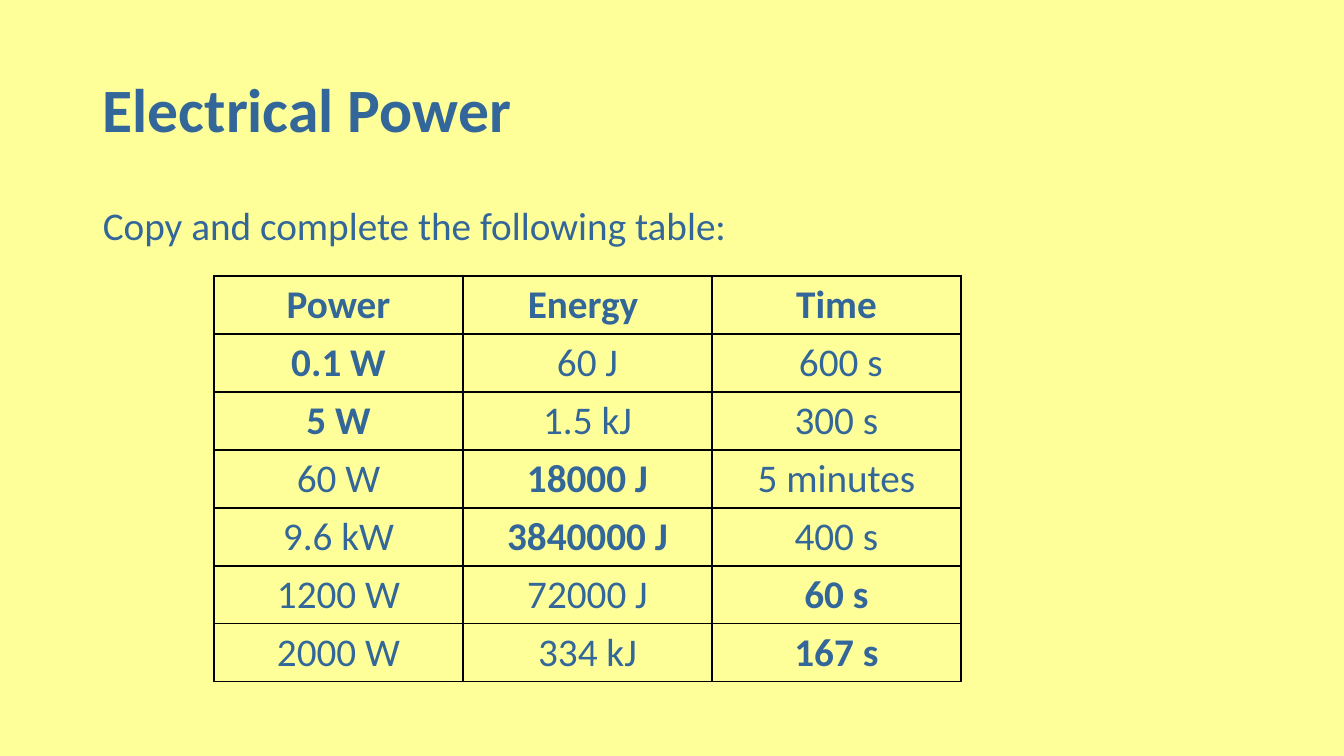
import dataclasses

import pptx
import pptx.dml.color
import pptx.enum.text
import pptx.oxml
import pptx.oxml.ns
import pptx.util

PX = 914400 / 100.8


@dataclasses.dataclass(frozen=True)
class Theme:
    font: str = "Calibri"
    back: str = "FFFF99"
    ink: str = "336699"
    rule: str = "000000"
    title: int = 44
    body: int = 28


THEME = Theme()
HEAD = ("Power", "Energy ", "Time")
# Each row: its three values, then the column that holds the answer.
ROWS = (
    (("0.1 W", "60 J", " 600 s"), 0),
    (("5 W", "1.5 kJ", "300 s"), 0),
    (("60 W", "18000 J", "5 minutes"), 1),
    (("9.6 kW", "3840000 J", "400 s"), 1),
    (("1200 W", "72000 J", "60 s"), 2),
    (("2000 W", "334 kJ", "167 s"), 2),
)


def px(num):
    return pptx.util.Emu(round(num * PX))


def color(code):
    return pptx.dml.color.RGBColor.from_string(code)


def style(para, size, bold=False):
    font = para.font
    font.name = THEME.font
    font.size = pptx.util.Pt(size)
    font.bold = bold
    font.color.rgb = color(THEME.ink)


def add_text(slide, text, area, size, bold=False, anchor="TOP"):
    box = slide.shapes.add_textbox(*map(px, area))
    frame = box.text_frame
    frame.word_wrap = True
    frame.vertical_anchor = pptx.enum.text.MSO_ANCHOR[anchor]
    para = frame.paragraphs[0]
    para.text = text
    para.line_spacing = 0.9
    style(para, size, bold)


def add_edges(cell):
    """Draw a thin rule on all four sides of a cell."""
    props = cell._tc.get_or_add_tcPr()
    for side in "LRTB":
        props.append(pptx.oxml.parse_xml(
            f'<a:ln{side} {pptx.oxml.ns.nsdecls("a")} w="12700">'
            f'<a:solidFill><a:srgbClr val="{THEME.rule}"/></a:solidFill>'
            f'</a:ln{side}>'))


def fill_cell(cell, text, bold):
    add_edges(cell)
    cell.fill.background()
    para = cell.text_frame.paragraphs[0]
    para.text = text
    para.alignment = pptx.enum.text.PP_ALIGN.CENTER
    style(para, THEME.body, bold)


def add_grid(slide, left, top, wide, high):
    """Add the table, with the head and the answers in bold."""
    rows, cols = len(ROWS) + 1, len(HEAD)
    grid = slide.shapes.add_table(
        rows, cols, px(left), px(top), px(wide * cols), px(high * rows)).table
    grid.horz_banding = False
    for col, text in enumerate(HEAD):
        fill_cell(grid.cell(0, col), text, True)
    for row, (texts, answer) in enumerate(ROWS, 1):
        for col, text in enumerate(texts):
            fill_cell(grid.cell(row, col), text, col == answer)


def main():
    deck = pptx.Presentation()
    deck.slide_width, deck.slide_height = px(1344), px(756)
    slide = deck.slides.add_slide(deck.slide_layouts[6])
    fill = slide.background.fill
    fill.solid()
    fill.fore_color.rgb = color(THEME.back)
    add_text(slide, "Electrical Power", (93, 40, 1159, 146),
             THEME.title, True, "MIDDLE")
    add_text(slide, "Copy and complete the following table:",
             (93, 202, 1159, 480), THEME.body)
    add_grid(slide, 214, 276, 249, 58)
    deck.save("out.pptx")


if __name__ == "__main__":
    main()
